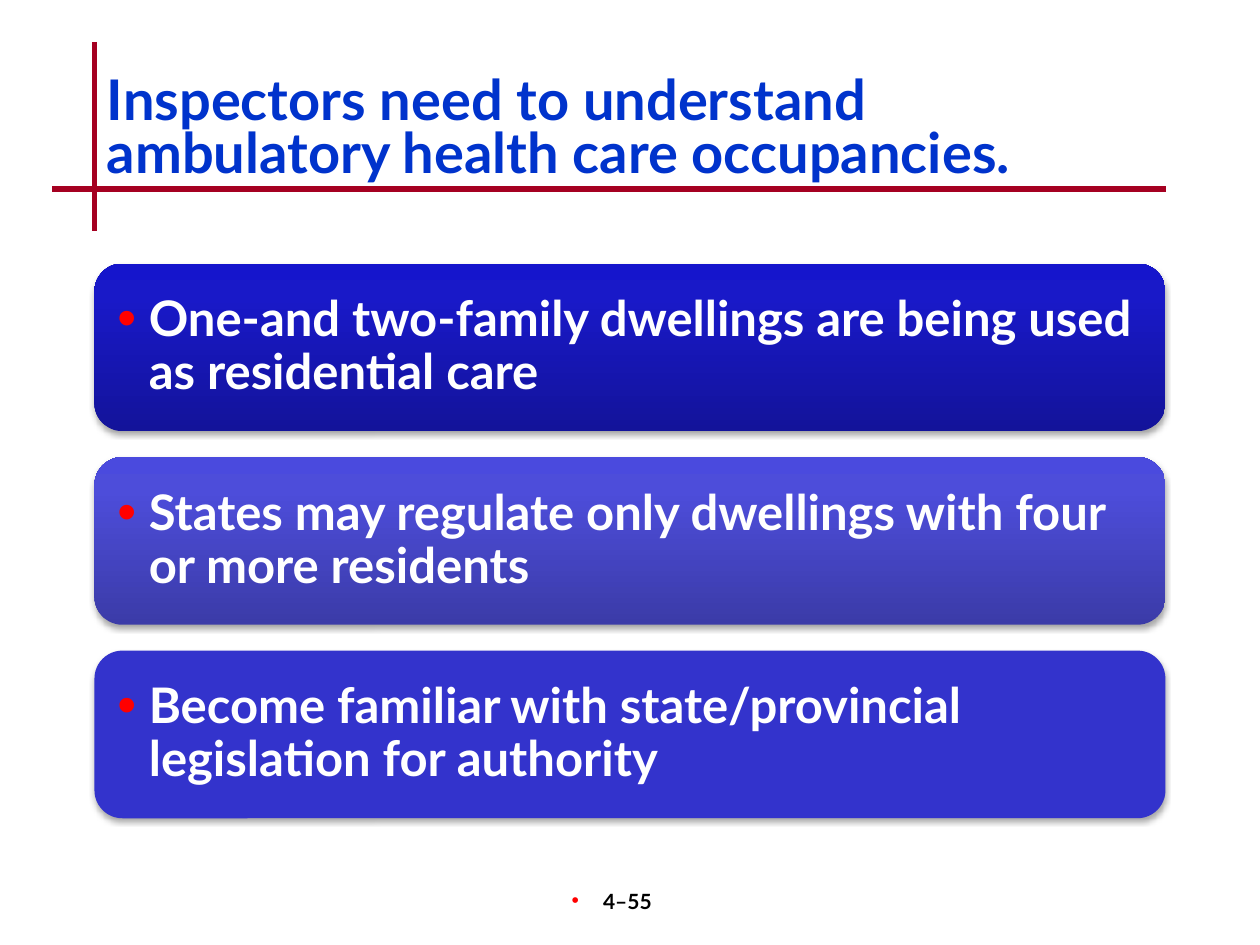
import pptx
import pptx.dml.color
import pptx.enum.shapes
import pptx.enum.text
import pptx.oxml
import pptx.oxml.ns
import pptx.util

Pt = pptx.util.Pt
Anchor = pptx.enum.text.MSO_ANCHOR
Align = pptx.enum.text.PP_ALIGN

# Content
TITLE = "Inspectors need to understand ambulatory health care occupancies."
PAGE_NUMBER = "4–55"
# Card text and fill, as gradient stops (percent, colour) from bottom to top
CARDS = [
    ("One-and two-family dwellings are being used as residential care",
     [(0, "13139A"), (80, "1919C8"), (100, "1515CC")]),
    ("States may regulate only dwellings with four or more residents",
     [(0, "3B3BA8"), (80, "4D4DDA"), (100, "4A4ADE")]),
    ("Become familiar with state/provincial legislation for authority",
     [(0, "3333CC")]),
]
COLORS = {"rule": "A50021", "title": "0033CC", "card_text": "FFFFFF",
          "bullet": "FF0000", "number": "000000", "shadow": "000000"}
FONT = "Lato"

# Layout, in points
LEFT, WIDTH = 54, 612
CARD_TOP, CARD_HEIGHT, CARD_PITCH = 150.6, 95.8, 110.6
CARD_PAD = 4.7
HANG = 18
RULES = [(54, 24, 54, 132), (30, 108, 666, 108)]


def rgb(name):
    return pptx.dml.color.RGBColor.from_string(COLORS[name])


def element(xml):
    return pptx.oxml.parse_xml(
        xml.replace(">", f" {pptx.oxml.ns.nsdecls('a')}>", 1))


def add_bullet(paragraph, size):
    properties = paragraph._p.get_or_add_pPr()
    properties.set("marL", str(Pt(HANG)))
    properties.set("indent", str(-Pt(HANG)))
    for xml in (f'<a:buClr><a:srgbClr val="{COLORS["bullet"]}"/></a:buClr>',
                f'<a:buSzPct val="{size * 1000}"></a:buSzPct>',
                '<a:buFont typeface="Arial"></a:buFont>',
                '<a:buChar char="•"></a:buChar>'):
        properties.append(element(xml))


def add_text(slide, text, box, *, size, color, insets=(7.2, 3.6, 7.2, 3.6),
             anchor=Anchor.TOP, align=Align.LEFT, spacing=1.0, bullet=None):
    frame = slide.shapes.add_textbox(*map(Pt, box)).text_frame
    frame.word_wrap = True
    frame.vertical_anchor = anchor
    (frame.margin_left, frame.margin_top,
     frame.margin_right, frame.margin_bottom) = map(Pt, insets)
    paragraph = frame.paragraphs[0]
    paragraph.alignment = align
    paragraph.line_spacing = spacing
    if bullet:
        add_bullet(paragraph, bullet)
    run = paragraph.add_run()
    run.text = text
    run.font.name = FONT
    run.font.size = Pt(size)
    run.font.bold = True
    run.font.color.rgb = rgb(color)


def add_rule(slide, ends):
    rule = slide.shapes.add_connector(
        pptx.enum.shapes.MSO_CONNECTOR.STRAIGHT, *map(Pt, ends))
    rule.line.color.rgb = rgb("rule")
    rule.line.width = Pt(3)
    rule._element.spPr.append(element("<a:effectLst></a:effectLst>"))


def add_card(slide, box, stops):
    card = slide.shapes.add_shape(
        pptx.enum.shapes.MSO_SHAPE.ROUNDED_RECTANGLE, *map(Pt, box))
    card.line.fill.background()
    properties = card._element.spPr
    if len(stops) == 1:
        card.fill.solid()
        card.fill.fore_color.rgb = pptx.dml.color.RGBColor.from_string(stops[0][1])
    else:
        stop_xml = "".join(
            f'<a:gs pos="{percent * 1000}"><a:srgbClr val="{color}"/></a:gs>'
            for percent, color in stops)
        properties.find(pptx.oxml.ns.qn("a:prstGeom")).addnext(element(
            f'<a:gradFill rotWithShape="1"><a:gsLst>{stop_xml}</a:gsLst>'
            '<a:lin ang="16200000" scaled="0"/></a:gradFill>'))
    properties.append(element(
        f'<a:effectLst><a:outerShdw blurRad="{Pt(3.1)}" dist="{Pt(1.8)}" '
        f'dir="5400000" rotWithShape="0"><a:srgbClr val="{COLORS["shadow"]}">'
        '<a:alpha val="35000"/></a:srgbClr></a:outerShdw></a:effectLst>'))


def main():
    presentation = pptx.Presentation()
    presentation.slide_width, presentation.slide_height = Pt(720), Pt(540)
    slide = presentation.slides.add_slide(presentation.slide_layouts[6])

    # Crossed rules, page number and title
    for ends in RULES:
        add_rule(slide, ends)
    add_text(slide, PAGE_NUMBER, (282, 504, 150, 36), size=12, color="number",
             insets=(7.2, 3.6, 22, 3.6), align=Align.CENTER, bullet=100)
    add_text(slide, TITLE, (LEFT, 40.5, WIDTH, 72), size=32, color="title",
             spacing=0.8)

    # Stacked cards
    for index, (text, stops) in enumerate(CARDS):
        top = CARD_TOP + index * CARD_PITCH
        add_card(slide, (LEFT, top, WIDTH, CARD_HEIGHT), stops)
        text_box = (LEFT + CARD_PAD, top + CARD_PAD,
                    WIDTH - 2 * CARD_PAD, CARD_HEIGHT - 2 * CARD_PAD)
        add_text(slide, text, text_box, size=28, color="card_text",
                 insets=(8.4,) * 4, anchor=Anchor.MIDDLE, spacing=0.9,
                 bullet=110)

    presentation.save("out.pptx")


if __name__ == "__main__":
    main()
